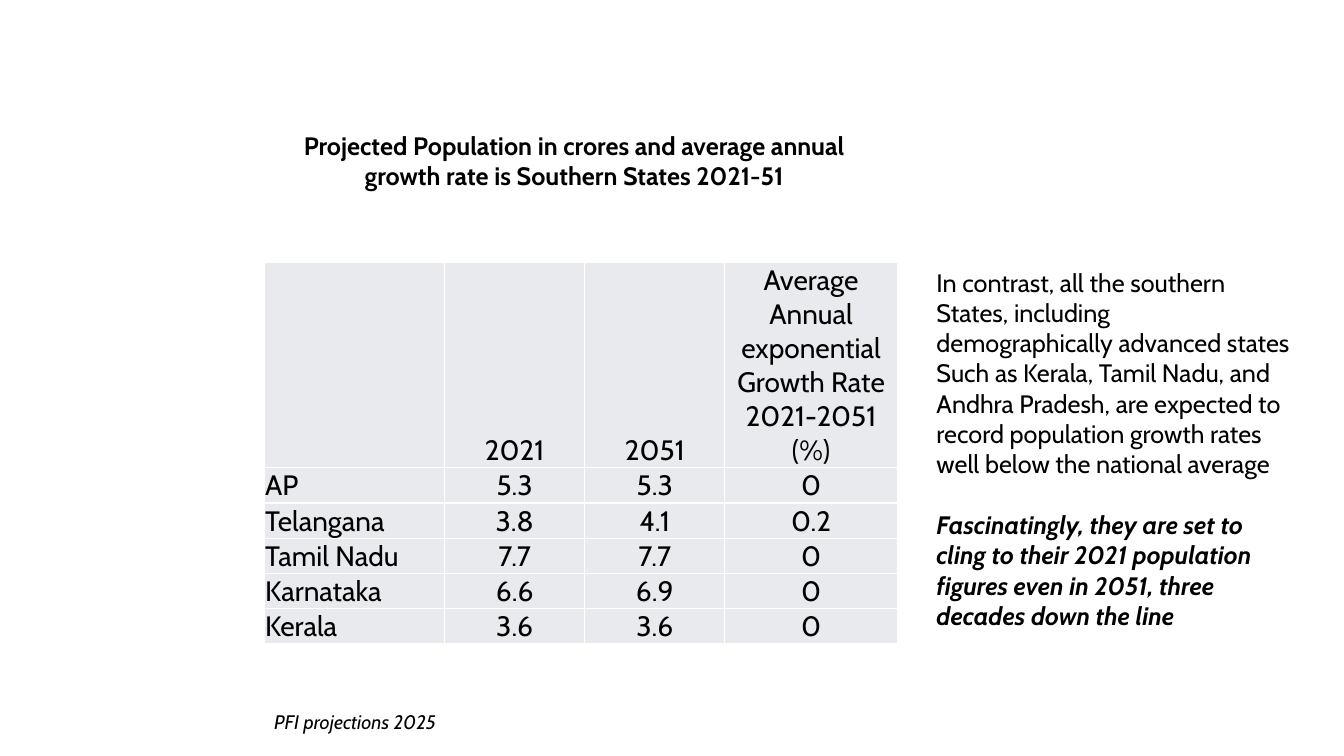
from lxml import etree
from pptx import Presentation
from pptx.dml.color import RGBColor
from pptx.enum.text import MSO_ANCHOR, MSO_AUTO_SIZE, PP_ALIGN
from pptx.oxml.ns import qn
from pptx.util import Inches, Pt

LEFT, CENTER = PP_ALIGN.LEFT, PP_ALIGN.CENTER
TOP, BOTTOM = MSO_ANCHOR.TOP, MSO_ANCHOR.BOTTOM
NO_FIT = MSO_AUTO_SIZE.NONE
BLACK = RGBColor(0x00, 0x00, 0x00)
WHITE = RGBColor(0xFF, 0xFF, 0xFF)
GREY = RGBColor(0xE8, 0xEA, 0xED)
FONT = "Cabin"

TITLE = ("Projected Population in crores and average annual growth rate "
         "is Southern States 2021-51")
SOURCE = "PFI projections 2025"
CONTRAST = ("In contrast, all the southern States, including demographically "
            "advanced states Such as Kerala, Tamil Nadu, and Andhra Pradesh, "
            "are expected to record population growth rates well below the "
            "national average")
FINDING = ("Fascinatingly, they are set to cling to their 2021 population "
           "figures even in 2051, three decades down the line\u00a0")
ROWS = [
    ("", "2021", "2051", "Average Annual exponential Growth Rate 2021-2051 (%)"),
    ("AP", "5.3", "5.3", "0"),
    ("Telangana", "3.8", "4.1", "0.2"),
    ("Tamil Nadu", "7.7", "7.7", "0"),
    ("Karnataka", "6.6", "6.9", "0"),
    ("Kerala", "3.6", "3.6", "0"),
]
WIDTHS = (1.79, 1.39, 1.39, 1.71)
HEAD_H, ROW_H = 2.01, 0.34


def add_run(para, text, size, bold=False, italic=False, align=LEFT):
    para.alignment = align
    run = para.add_run()
    run.text = text
    font = run.font
    font.name, font.size = FONT, Pt(size)
    font.bold, font.italic = bold, italic
    font.color.rgb = BLACK


def add_frame(slide, box):
    frame = slide.shapes.add_textbox(*map(Inches, box)).text_frame
    frame.word_wrap = True
    return frame


def add_title(slide, box):
    title = slide.shapes.title
    title.left, title.top, title.width, title.height = map(Inches, box)
    frame = title.text_frame
    frame.word_wrap = True
    frame.auto_size = NO_FIT
    frame.vertical_anchor = TOP
    add_run(frame.paragraphs[0], TITLE, 18, bold=True, align=CENTER)


def add_borders(cell):
    """Draw a thin white line on all four sides of the cell."""
    props = cell._tc.get_or_add_tcPr()
    for side in ("lnL", "lnR", "lnT", "lnB"):
        line = etree.SubElement(props, qn("a:" + side), w=str(Pt(1)))
        fill = etree.SubElement(line, qn("a:solidFill"))
        etree.SubElement(fill, qn("a:srgbClr"), val=str(WHITE))


def style_cell(cell):
    add_borders(cell)
    cell.fill.solid()
    cell.fill.fore_color.rgb = GREY
    cell.vertical_anchor = BOTTOM
    cell.margin_left = cell.margin_right = cell.margin_top = Inches(0.01)
    cell.margin_bottom = 0


def add_states(slide, left, top):
    height = HEAD_H + ROW_H * (len(ROWS) - 1)
    box = map(Inches, (left, top, sum(WIDTHS), height))
    table = slide.shapes.add_table(len(ROWS), len(WIDTHS), *box).table
    table.first_row = table.horz_banding = False
    for col, width in zip(table.columns, WIDTHS):
        col.width = Inches(width)
    for r, values in enumerate(ROWS):
        table.rows[r].height = Inches(ROW_H if r else HEAD_H)
        for c, value in enumerate(values):
            cell = table.cell(r, c)
            style_cell(cell)
            if value:
                para = cell.text_frame.paragraphs[0]
                add_run(para, value, 20, align=CENTER if c else LEFT)


def add_comment(slide, box):
    frame = add_frame(slide, box)
    add_run(frame.paragraphs[0], CONTRAST, 18)
    para = frame.add_paragraph()
    para.space_before = Pt(22)
    add_run(para, FINDING, 18, bold=True, italic=True)


def add_source(slide, box):
    frame = add_frame(slide, box)
    add_run(frame.paragraphs[0], SOURCE, 14, italic=True)


def main():
    deck = Presentation()
    deck.slide_width, deck.slide_height = Inches(13.33), Inches(7.5)
    slide = deck.slides.add_slide(deck.slide_layouts.get_by_name("Title Only"))
    left, top = 2.62, 2.6
    add_title(slide, (left, 1.24, 6.15, 1.01))
    add_states(slide, left, top)
    add_comment(slide, (9.19, top, 3.7, 4.04))
    add_source(slide, (left, 6.99, 3.67, 0.34))
    deck.save("out.pptx")


if __name__ == "__main__":
    main()
